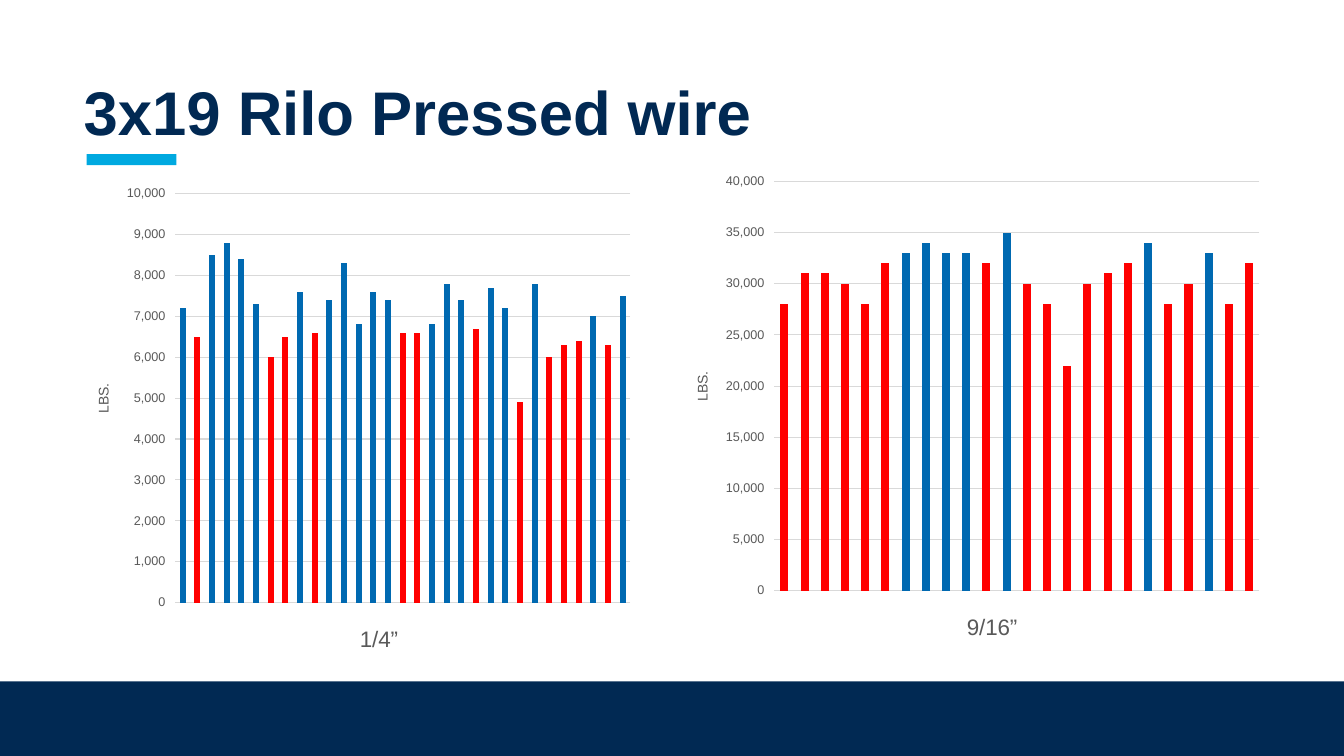
from lxml import etree
from pptx import Presentation
from pptx.chart.data import CategoryChartData
from pptx.dml.color import RGBColor
from pptx.enum.chart import XL_CHART_TYPE as ChartType, XL_TICK_LABEL_POSITION as LabelPosition
from pptx.enum.chart import XL_TICK_MARK as TickMark
from pptx.enum.shapes import MSO_SHAPE as Shape
from pptx.enum.text import MSO_ANCHOR as Anchor, PP_ALIGN as Align
from pptx.oxml.ns import qn
from pptx.util import Inches, Pt

FONT = "Arial"
COLOURS = {"navy": "012953", "accent": "00A9E0", "holding": "0069B1", "weak": "FF0000",
           "label": "595959", "grid": "D9D9D9", "text": "000000"}
HEADING = "3x19 Rilo Pressed wire"
BANDS = [((0, 6.76, 13.33, 0.74), "navy"), ((0.86, 1.53, 0.89, 0.11), "accent")]

# Loads in pounds; bars below the threshold are red.
WIRE_TESTS = [
    {"diameter": "1/4”", "diameter_left": 2.8, "at": (0.73, 1.75, 5.64, 4.94),
     "threshold": 6800, "top": 10000, "step": 1000,
     "loads": [7200, 6500, 8500, 8800, 8400, 7300, 6000, 6500, 7600, 6600, 7400,
               8300, 6800, 7600, 7400, 6600, 6600, 6800, 7800, 7400, 6700, 7700,
               7200, 4900, 7800, 6000, 6300, 6400, 7000, 6300, 7500]},
    {"diameter": "9/16”", "diameter_left": 2.88, "at": (6.67, 1.63, 5.94, 4.94),
     "threshold": 33000, "top": 40000, "step": 5000,
     "loads": [28000, 31000, 31000, 30000, 28000, 32000, 33000, 34000, 33000, 33000,
               32000, 35000, 30000, 28000, 22000, 30000, 31000, 32000, 34000, 28000,
               30000, 33000, 28000, 32000]},
]
PLOT_LEFT, PLOT_TOP, PLOT_RIGHT_GAP, PLOT_HEIGHT = 1.01, 0.17, 0.12, 4.06


def rgb(name):
    return RGBColor.from_string(COLOURS[name])


def style(font, size, colour, bold=False):
    font.name, font.size, font.bold = FONT, Pt(size), bold
    font.color.rgb = rgb(colour)


def manual_layout(parent, chart_size, left, top, size=None):
    """Place a chart part at inches from the chart's corner."""
    layout = parent.find(qn("c:layout"))
    if layout is None:
        layout = etree.Element(qn("c:layout"))
        text = parent.find(qn("c:tx"))
        parent.insert(0 if text is None else 1, layout)
    for child in list(layout):
        layout.remove(child)
    manual = etree.SubElement(layout, qn("c:manualLayout"))
    settings = [("xMode", "edge"), ("yMode", "edge"),
                ("x", left / chart_size[0]), ("y", top / chart_size[1])]
    if size:
        settings.insert(0, ("layoutTarget", "inner"))
        settings += [("w", size[0] / chart_size[0]), ("h", size[1] / chart_size[1])]
    for tag, value in settings:
        etree.SubElement(manual, qn(f"c:{tag}")).set("val", str(value))


def title_axis(axis, wording, size, chart_size, left, top):
    run = axis.axis_title.text_frame.paragraphs[0].add_run()
    run.text = wording
    style(run.font, size, "label")
    manual_layout(axis.axis_title._element, chart_size, left, top)


def add_wire_chart(slide, test):
    loads = test["loads"]
    chart_data = CategoryChartData(number_format="#,##0")
    chart_data.categories = [str(n) for n in range(1, len(loads) + 1)]
    chart_data.add_series("Series 1", loads)
    chart = slide.shapes.add_chart(ChartType.COLUMN_CLUSTERED,
                                   *map(Inches, test["at"]), chart_data).chart
    chart.has_title = chart.has_legend = False
    style(chart.font, 10, "text")

    bars = chart.plots[0]
    bars.gap_width = 150
    bars.vary_by_categories = False
    series = bars.series[0]
    series.format.fill.solid()
    series.format.fill.fore_color.rgb = rgb("holding")
    for index, load in enumerate(loads):
        if load < test["threshold"]:
            fill = series.points[index].format.fill
            fill.solid()
            fill.fore_color.rgb = rgb("weak")

    load_axis, sample_axis = chart.value_axis, chart.category_axis
    load_axis.minimum_scale, load_axis.maximum_scale = 0, test["top"]
    load_axis.major_unit = test["step"]
    load_axis.major_tick_mark = TickMark.OUTSIDE
    load_axis.tick_labels.number_format = "#,##0"
    load_axis.tick_labels.number_format_is_linked = False
    style(load_axis.tick_labels.font, 9, "label")
    load_axis.format.line.fill.background()
    sample_axis.major_tick_mark = TickMark.NONE
    sample_axis.tick_label_position = LabelPosition.NONE
    for line in (load_axis.major_gridlines.format.line, sample_axis.format.line):
        line.color.rgb = rgb("grid")
        line.width = Pt(0.75)

    chart_size = test["at"][2:]
    plot_size = (chart_size[0] - PLOT_LEFT - PLOT_RIGHT_GAP, PLOT_HEIGHT)
    plot_area = chart._chartSpace.chart.plotArea
    manual_layout(plot_area, chart_size, PLOT_LEFT, PLOT_TOP, plot_size)
    title_axis(load_axis, "LBS.", 10, chart_size, 0.18, 2.03)
    title_axis(sample_axis, test["diameter"], 16, chart_size, test["diameter_left"], 4.41)


def main():
    deck = Presentation()
    deck.slide_width, deck.slide_height = Inches(13.33), Inches(7.5)
    slide = deck.slides.add_slide(deck.slide_layouts[5])

    for place, colour in BANDS:
        band = slide.shapes.add_shape(Shape.RECTANGLE, *map(Inches, place))
        band.shadow.inherit = False
        band.fill.solid()
        band.fill.fore_color.rgb = rgb(colour)
        band.line.fill.background()

    title = slide.shapes.title
    title.left, title.top, title.width, title.height = map(Inches, (0.73, 0.4, 11.5, 1.13))
    title.text_frame.vertical_anchor = Anchor.BOTTOM
    paragraph = title.text_frame.paragraphs[0]
    paragraph.alignment, paragraph.line_spacing = Align.LEFT, 0.9
    run = paragraph.add_run()
    run.text = HEADING
    style(run.font, 44, "navy", bold=True)

    for test in WIRE_TESTS:
        add_wire_chart(slide, test)
    deck.save("out.pptx")


if __name__ == "__main__":
    main()
